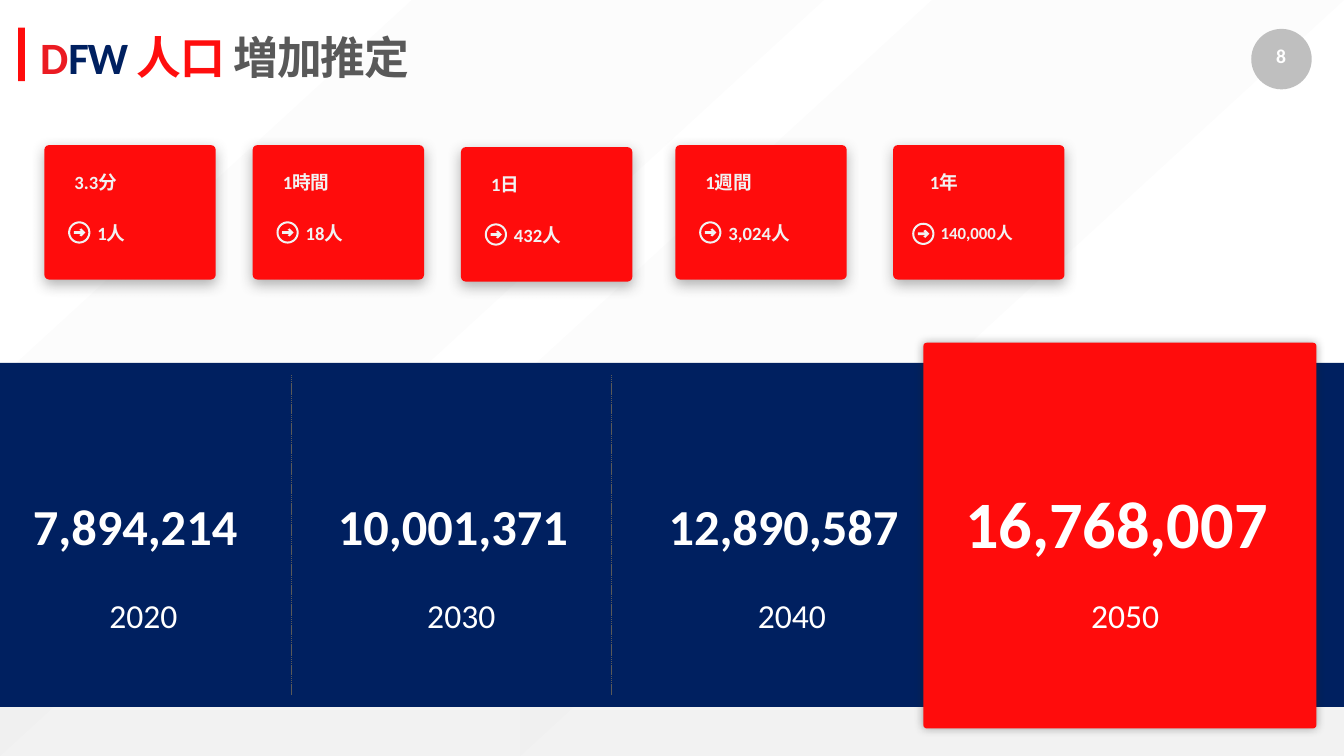
from dataclasses import dataclass
from math import cos, pi, sin

from lxml.etree import SubElement
from pptx import Presentation
from pptx.dml.color import RGBColor
from pptx.enum.dml import MSO_LINE
from pptx.enum.shapes import MSO_CONNECTOR, MSO_SHAPE
from pptx.enum.text import MSO_AUTO_SIZE, PP_ALIGN
from pptx.oxml.ns import qn
from pptx.util import Inches, Pt

WHITE = RGBColor(0xFF, 0xFF, 0xFF)
PALE = RGBColor(0xF2, 0xF2, 0xF2)
STRIPE = RGBColor(0xD9, 0xD9, 0xD9)
BADGE = RGBColor(0xBF, 0xBF, 0xBF)
GREY = RGBColor(0x59, 0x59, 0x59)
NAVY = RGBColor(0x00, 0x20, 0x60)
RED = RGBColor(0xFF, 0x0C, 0x0C)
TITLE_RED = RGBColor(0xFF, 0x0E, 0x0E)
DARK_RED = RGBColor(0xEB, 0x1B, 0x22)

SLIDE_W, SLIDE_H = Inches(20), Inches(11.25)
COL, ROW = SLIDE_W / 20, SLIDE_H / 11.25

ARROW = [(0.09, 0), (0.03, 0.06), (0, 0.04), (0.03, 0.02), (-0.08, 0.02),
         (-0.08, -0.02), (0.03, -0.02), (0, -0.04), (0.03, -0.06)]


@dataclass
class Shadow:
    """Outer shadow: lengths in points, direction in degrees."""
    color: str
    blur: float
    dist: float = 0
    angle: float = 0
    alpha: int = 40


@dataclass
class Rate:
    """Card with the growth over one span of time."""
    x: float
    label: str
    label_w: float
    value: str
    drop: float = 0
    label_dx: float = 0.35
    icon: tuple = (0.52, 1.3)
    text: tuple = (0.69, 1.03)
    size: int = 20


@dataclass
class Estimate:
    """Population in one year, centred on a column position."""
    center: float
    year: str
    count: str
    width: float = 3.66
    height: float = 1.01
    size: int = 54


RATES = [
    Rate(0.66, "3.3分", 1.72, "1人"),
    Rate(3.76, "1時間", 1.33, "18人"),
    Rate(6.86, "1日", 0.93, "432人", drop=0.03),
    Rate(10.05, "1週間", 1.12, "3,024人"),
    Rate(13.29, "1年", 1.04, "140,000人", label_dx=0.45, icon=(0.45, 1.32),
         text=(0.61, 1.05), size=18),
]
ESTIMATES = [
    Estimate(2.03, "2020", "7,894,214", width=3.28),
    Estimate(6.76, "2030", "10,001,371"),
    Estimate(11.68, "2040", "12,890,587"),
    Estimate(16.64, "2050", "16,768,007", 4.75, 1.3, 71),
]


def grid(x: float, y: float, w: float, h: float) -> tuple:
    """Turn columns and rows into slide lengths."""
    return int(x * COL), int(y * ROW), int(w * COL), int(h * ROW)


def paint(sp, color: RGBColor) -> None:
    """Give a shape a plain fill, no line and no shadow."""
    sp.fill.solid()
    sp.fill.fore_color.rgb = color
    sp.line.fill.background()
    sp.shadow.inherit = False


def add_box(s, kind, box: tuple, color: RGBColor, radius: float | None = None,
            alpha: int | None = None, shadow: Shadow | None = None):
    """Add a filled preset shape."""
    sp = s.shapes.add_shape(kind, *grid(*box))
    paint(sp, color)
    spPr = sp.element.spPr
    if radius is not None:
        sp.adjustments[0] = radius
    if alpha is not None:
        clr = spPr.find(qn("a:solidFill")).find(qn("a:srgbClr"))
        SubElement(clr, qn("a:alpha"), val=str(alpha * 1000))
    if shadow:
        outer = SubElement(spPr.find(qn("a:effectLst")), qn("a:outerShdw"),
                           blurRad=str(Pt(shadow.blur)), dist=str(Pt(shadow.dist)),
                           dir=str(int(shadow.angle * 60000)), rotWithShape="0")
        clr = SubElement(outer, qn("a:srgbClr"), val=shadow.color)
        SubElement(clr, qn("a:alpha"), val=str(shadow.alpha * 1000))
    return sp


def write(sp, runs, size: float, color: RGBColor = WHITE, bold: bool = True,
          wrap: bool = False, grow: bool = True, align=PP_ALIGN.LEFT,
          spacing: float | None = None, tracking: float | None = None,
          insets: tuple = (0.1, 0.05)) -> None:
    """Write one paragraph: a string, or (text, color) pairs."""
    tf = sp.text_frame
    tf.word_wrap = wrap
    tf.auto_size = MSO_AUTO_SIZE.SHAPE_TO_FIT_TEXT if grow else MSO_AUTO_SIZE.NONE
    tf.margin_left = tf.margin_right = Inches(insets[0])
    tf.margin_top = tf.margin_bottom = Inches(insets[1])
    p = tf.paragraphs[0]
    p.alignment = align
    if spacing:
        p.line_spacing = spacing
    for text, rgb in [(runs, color)] if isinstance(runs, str) else runs:
        r = p.add_run()
        r.text = text
        r.font.name, r.font.size, r.font.bold = "Calibri", Pt(size), bold
        r.font.color.rgb = rgb
        if tracking:
            r.font._element.set("spc", str(int(tracking * 100)))


def add_text(s, box: tuple, runs, size: float, **fmt) -> None:
    """Add a text box."""
    write(s.shapes.add_textbox(*grid(*box)), runs, size, **fmt)


def add_arrow_icon(s, x: float, y: float) -> None:
    """Draw a ring with an arrow inside, centred on x and y."""
    turns = [i * pi / 24 for i in range(48)]
    rings = [[(rad * cos(t), rad * sin(t)) for t in turns] for rad in (0.165, 0.135)]
    outlines = [[(int((x + dx) * COL), int((y + dy) * ROW)) for dx, dy in pts]
                for pts in (*rings, ARROW)]
    fb = s.shapes.build_freeform(*outlines[0][0])
    for i, pts in enumerate(outlines):
        if i:
            fb.move_to(*pts[0])
        fb.add_line_segments(pts[1:], close=True)
    paint(fb.convert_to_shape(), PALE)


def add_divider(s, x: float) -> None:
    """Draw a dashed upright line across the band."""
    left, top, _, bottom = grid(x, 5.58, 0, 10.34)
    c = s.shapes.add_connector(MSO_CONNECTOR.STRAIGHT, left, top, left, bottom)
    c.line.color.rgb = GREY
    c.line.width = Pt(0.5)
    c.line.dash_style = MSO_LINE.SQUARE_DOT
    SubElement(c.element.spPr, qn("a:effectLst"))


def add_rate(s, rate: Rate) -> None:
    """Draw one growth card."""
    x, y = rate.x, 2.16 + rate.drop
    add_box(s, MSO_SHAPE.ROUNDED_RECTANGLE, (x, y, 2.55, 2), RED, radius=0.035,
            shadow=Shadow("404040", 15, 5, 90))
    label = add_box(s, MSO_SHAPE.RECTANGLE,
                    (x + rate.label_dx, y + 0.33, rate.label_w, 0.44), RED)
    write(label, rate.label, 20, color=PALE)
    dx, dy = rate.text
    add_text(s, (x + dx, y + dy, 2.55 - dx, 0.5), rate.value, rate.size,
             color=PALE, wrap=True, spacing=1.2)
    add_arrow_icon(s, x + rate.icon[0], y + rate.icon[1])


def add_estimate(s, e: Estimate) -> None:
    """Write one population figure above its year."""
    add_text(s, (e.center - e.width / 2, 7.8 - e.height / 2 + 0.03, e.width, e.height)
             if e.size == 54 else (e.center - e.width / 2, 7.12, e.width, e.height),
             e.count, e.size)
    add_text(s, (e.center - 0.5, 8.8, 1.23, 0.71), e.year, 36, bold=False)


def main() -> None:
    """Build and save the slide."""
    prs = Presentation()
    prs.slide_width, prs.slide_height = SLIDE_W, SLIDE_H
    s = prs.slides.add_slide(prs.slide_layouts[6])
    fill = s.background.fill
    fill.gradient()
    fill.gradient_angle = 270
    for stop, position, color in zip(fill.gradient_stops, (0.57, 1), (WHITE, PALE)):
        stop.position, stop.color.rgb = position, color

    for x in (0, 7.74):
        add_box(s, MSO_SHAPE.DIAGONAL_STRIPE, (x, 0, 12.26, 11.25), STRIPE, alpha=8)
    add_box(s, MSO_SHAPE.OVAL, (18.62, 0.43, 0.9, 0.9), BADGE)
    add_text(s, (18.52, 0.5, 1.09, 0.75), "8", 21, wrap=True, grow=False,
             align=PP_ALIGN.CENTER, insets=(0.3, 0.15))
    add_box(s, MSO_SHAPE.RECTANGLE, (0, 5.4, 20, 5.12), NAVY)
    add_box(s, MSO_SHAPE.ROUNDED_RECTANGLE, (13.74, 5.1, 5.85, 5.74), RED,
            radius=0.009, shadow=Shadow("262626", 10))
    for x in (4.34, 9.1):
        add_divider(s, x)
    for estimate in ESTIMATES:
        add_estimate(s, estimate)
    add_box(s, MSO_SHAPE.RECTANGLE, (0.27, 0.41, 0.1, 0.8), RED)
    add_text(s, (0.5, 0.4, 16.55, 0.91),
             [("D", DARK_RED), ("FW ", NAVY), ("人口 ", TITLE_RED), ("増加推定", GREY)],
             48, wrap=True, tracking=-1.5)
    for rate in RATES:
        add_rate(s, rate)
    prs.save("out.pptx")


if __name__ == "__main__":
    main()
